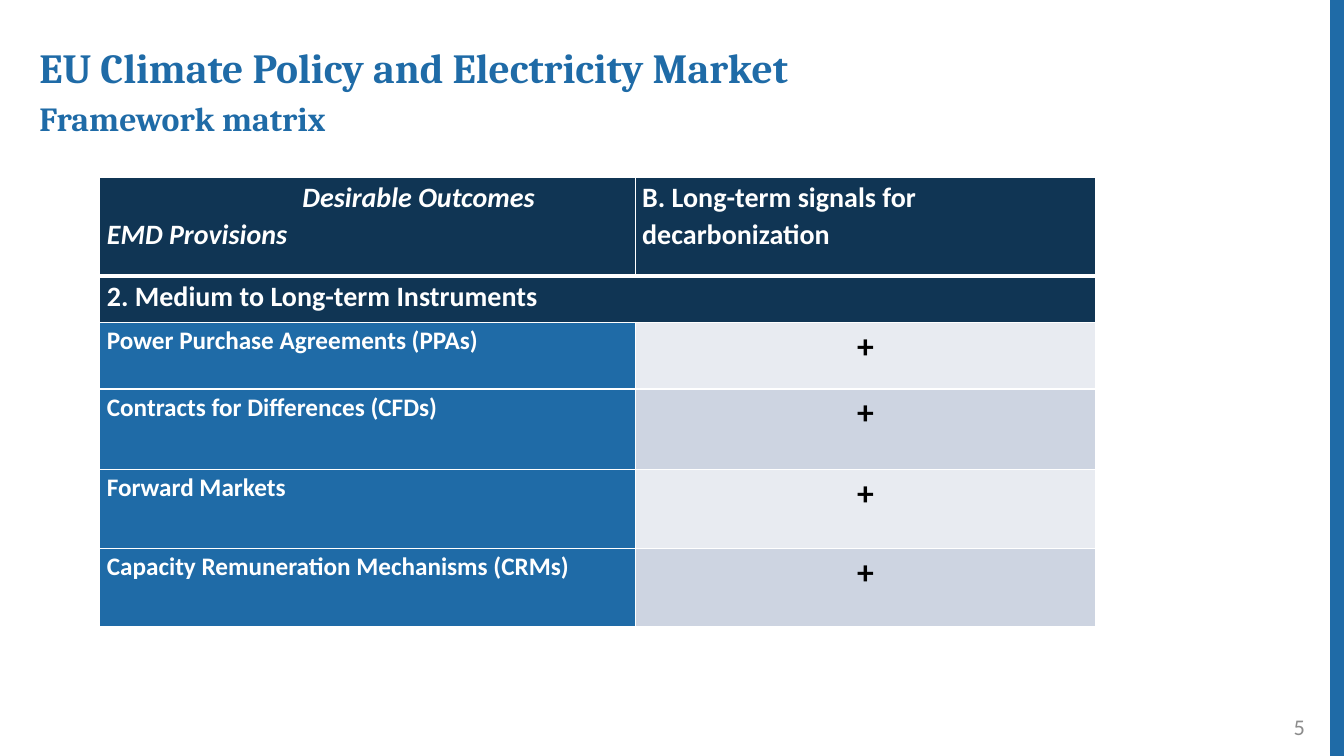
"""Build the EU electricity market framework matrix slide."""
from dataclasses import dataclass

from lxml.etree import SubElement
from pptx import Presentation
from pptx.dml.color import RGBColor
from pptx.enum.shapes import MSO_CONNECTOR
from pptx.enum.text import MSO_ANCHOR, MSO_AUTO_SIZE, PP_ALIGN
from pptx.oxml.ns import qn
from pptx.util import Pt

TITLE = "EU Climate Policy and Electricity Market"
SUBTITLE = "Framework matrix"
OUTCOMES, PROVISIONS = "Desirable Outcomes", "EMD Provisions"
SIGNALS = "B. Long-term signals for decarbonization"
SECTION = "2. Medium to Long-term Instruments"
INSTRUMENTS = [
    ("Power Purchase Agreements (PPAs)", "+"),
    ("Contracts for Differences (CFDs)", "+"),
    ("Forward Markets", "+"),
    ("Capacity Remuneration Mechanisms (CRMs)", "+"),
]
PAGE_NUMBER = "5"

PX = 9144
PAGE_SIZE = (1333, 750)
TITLE_BOX = (29, 46, 1196, 101)
NUMBER_BOX = (1004, 701, 300, 40)
TABLE_BOX = (99, 176, 988, 446)
COLUMN_WIDTHS = (531, 457)
ROW_HEIGHTS = (98, 46, 66, 80, 78, 78)
CELL_MARGINS = (7, 1, 7, 0)
EDGE_X = 1327
OUTCOMES_INDENT = 194


@dataclass(frozen=True)
class Theme:
    """Hold the colours, fonts and type sizes."""
    blue: str = "1F6BA7"
    navy: str = "103554"
    white: str = "FFFFFF"
    black: str = "000000"
    grey: str = "8C8C8C"
    bands: tuple = ("E8EBF1", "CDD4E1")
    heading_font: str = "Cambria"
    body_font: str = "Calibri"
    title: float = 29.6
    subtitle: float = 24.1
    header: int = 20
    label: int = 18
    mark: int = 24
    number: int = 16


THEME = Theme()


def scaled(lengths):
    """Turn px lengths into EMU."""
    return [length * PX for length in lengths]


def write(para, text, *, size, color=THEME.white, font=THEME.body_font, bold=True,
          italic=False, align=PP_ALIGN.LEFT, spacing=1.07, before=0, after=0, indent=0):
    """Put formatted text in a paragraph."""
    para.alignment, para.line_spacing = align, spacing
    para.space_before, para.space_after = Pt(before), Pt(after)
    properties = para._p.get_or_add_pPr()
    properties.set("marL", str(indent * PX))
    properties.set("indent", "0")
    span = para.add_run()
    span.text = text
    span.font.size, span.font.name = Pt(size), font
    span.font.bold, span.font.italic = bold, italic
    span.font.color.rgb = RGBColor.from_string(color)


def style_cell(cell, fill, bottom=1, top=1):
    """Set the margins, white borders and fill of a cell."""
    (cell.margin_left, cell.margin_top,
     cell.margin_right, cell.margin_bottom) = scaled(CELL_MARGINS)
    properties = cell._tc.get_or_add_tcPr()
    for side, width in (("L", 1), ("R", 1), ("T", top), ("B", bottom)):
        border = SubElement(properties, qn(f"a:ln{side}"), w=str(Pt(width)))
        paint = SubElement(border, qn("a:solidFill"))
        SubElement(paint, qn("a:srgbClr"), val=THEME.white)
    cell.fill.solid()
    cell.fill.fore_color.rgb = RGBColor.from_string(fill)


def add_title(page):
    """Place the two-line title."""
    box = page.shapes.title
    box.left, box.top, box.width, box.height = scaled(TITLE_BOX)
    frame = box.text_frame
    frame.word_wrap, frame.auto_size = True, MSO_AUTO_SIZE.NONE
    frame.vertical_anchor = MSO_ANCHOR.TOP
    look = dict(color=THEME.blue, font=THEME.heading_font, spacing=0.8)
    write(frame.paragraphs[0], TITLE, size=THEME.title, **look)
    write(frame.add_paragraph(), SUBTITLE, size=THEME.subtitle, before=10, **look)


def add_matrix(page):
    """Place the table of instruments."""
    table = page.shapes.add_table(len(ROW_HEIGHTS), len(COLUMN_WIDTHS),
                                  *scaled(TABLE_BOX)).table
    for column, width in zip(table.columns, scaled(COLUMN_WIDTHS)):
        column.width = width
    for row, height in zip(table.rows, scaled(ROW_HEIGHTS)):
        row.height = height

    corner, signals = table.cell(0, 0), table.cell(0, 1)
    section = table.cell(1, 0)
    section.merge(table.cell(1, 1))
    for column in range(len(COLUMN_WIDTHS)):
        style_cell(table.cell(0, column), THEME.navy, bottom=3)
        style_cell(table.cell(1, column), THEME.navy, top=3)
    write(corner.text_frame.paragraphs[0], OUTCOMES, size=THEME.header,
          italic=True, indent=OUTCOMES_INDENT)
    write(corner.text_frame.add_paragraph(), PROVISIONS, size=THEME.header, italic=True)
    write(signals.text_frame.paragraphs[0], SIGNALS, size=THEME.header)
    write(section.text_frame.paragraphs[0], SECTION, size=THEME.header, after=8)

    for index, (name, mark) in enumerate(INSTRUMENTS):
        label, rating = table.cell(index + 2, 0), table.cell(index + 2, 1)
        style_cell(label, THEME.blue)
        style_cell(rating, THEME.bands[index % 2])
        write(label.text_frame.paragraphs[0], name, size=THEME.label, after=8)
        write(rating.text_frame.paragraphs[0], mark, size=THEME.mark,
              color=THEME.black, align=PP_ALIGN.CENTER, after=8)


def add_edge(page):
    """Draw the blue line on the right edge."""
    edge = page.shapes.add_connector(MSO_CONNECTOR.STRAIGHT,
                                     *scaled((EDGE_X, 0, EDGE_X, PAGE_SIZE[1])))
    edge.line.color.rgb = RGBColor.from_string(THEME.blue)
    edge.line.width = Pt(12)
    SubElement(edge._element.spPr, qn("a:effectLst"))


def add_number(page):
    """Place the page number."""
    frame = page.shapes.add_textbox(*scaled(NUMBER_BOX)).text_frame
    frame.word_wrap, frame.vertical_anchor = True, MSO_ANCHOR.MIDDLE
    write(frame.paragraphs[0], PAGE_NUMBER, size=THEME.number, color=THEME.grey,
          bold=False, align=PP_ALIGN.RIGHT, spacing=1.0)


def main():
    """Assemble and save the deck."""
    deck = Presentation()
    deck.slide_width, deck.slide_height = scaled(PAGE_SIZE)
    page = deck.slides.add_slide(deck.slide_layouts.get_by_name("Title Only"))
    add_edge(page)
    add_number(page)
    add_title(page)
    add_matrix(page)
    deck.save("out.pptx")


if __name__ == "__main__":
    main()
